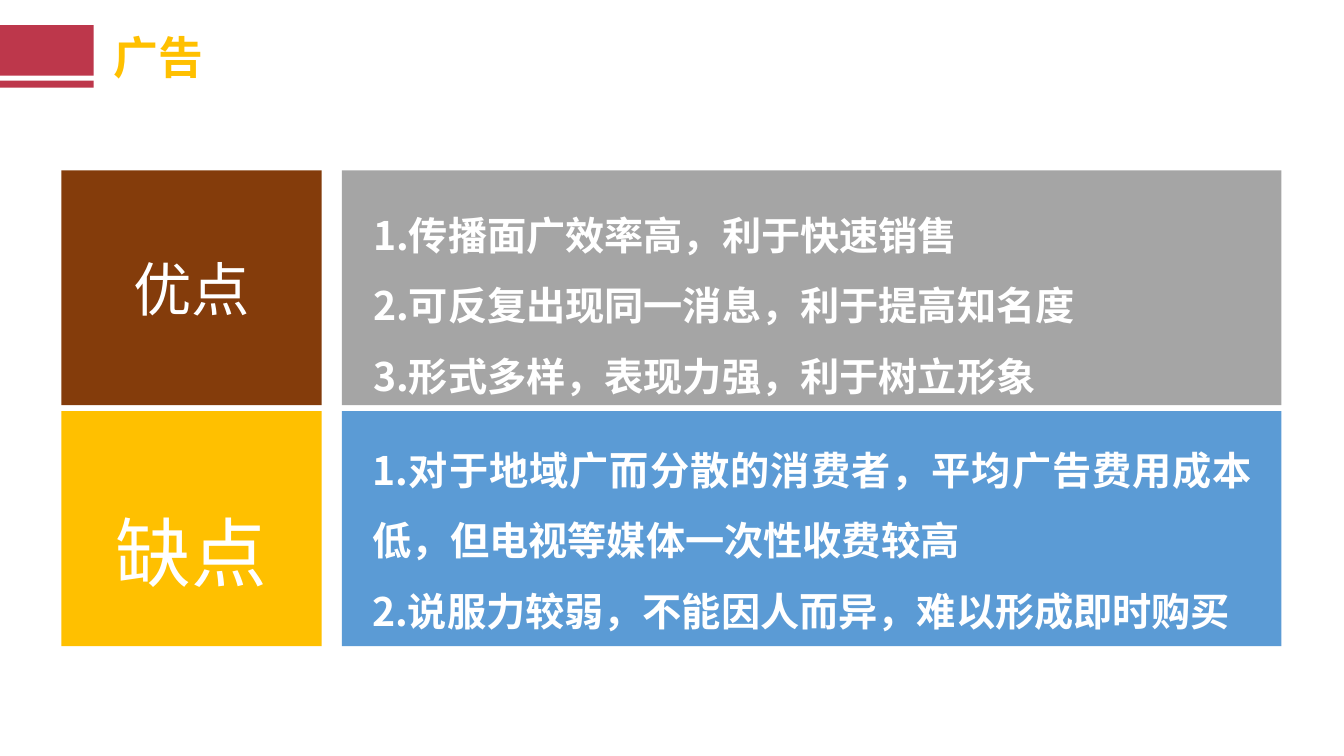
"""Build the slide on the strengths and weaknesses of advertising."""
from pptx import Presentation
from pptx import util as u
from pptx.dml.color import RGBColor
from pptx.enum import shapes, text
from pptx.oxml import ns, xmlchemy

COLOURS = {
    "brown": "843C0B", "grey": "A5A5A5", "gold": "FFC000",
    "blue": "5B9BD5", "red": "BD374B", "white": "FFFFFF",
}
BODY_FONT = "Noto Sans CJK SC"
LABEL_LEFT, LABEL_WIDTH = 0.61, 2.58
PANEL_LEFT, PANEL_WIDTH = 3.39, 9.32
TOP, ROW_HEIGHT, ROW_PITCH = 1.69, 2.33, 2.39
ROWS = [
    {
        "label": "优点", "size": 41.7, "spacing": None,
        "label_fill": "brown", "panel_fill": "grey", "text_at": (3.7, 1.86),
        "points": ["1.传播面广效率高，利于快速销售",
                   "2.可反复出现同一消息，利于提高知名度",
                   "3.形式多样，表现力强，利于树立形象"],
    },
    {
        "label": "缺点", "size": 54, "spacing": 1.5,
        "label_fill": "gold", "panel_fill": "blue", "text_at": (3.69, 4.19),
        "points": ["1.对于地域广而分散的消费者，平均广告费用成本低，但电视等媒体一次性收费较高",
                   "2.说服力较弱，不能因人而异，难以形成即时购买"],
    },
]


def add_block(slide, left, top, width, height, fill):
    """Add a plain filled rectangle without outline or shadow."""
    block = slide.shapes.add_shape(
        shapes.MSO_SHAPE.RECTANGLE, *map(u.Inches, (left, top, width, height)))
    block.shadow.inherit = False
    block.fill.solid()
    block.fill.fore_color.rgb = RGBColor.from_string(COLOURS[fill])
    block.line.fill.background()
    return block


def add_text_box(slide, left, top, width, height):
    """Add a wrapping text box that grows with its text."""
    box = slide.shapes.add_textbox(*map(u.Inches, (left, top, width, height)))
    box.text_frame.word_wrap = True
    box.text_frame.auto_size = text.MSO_AUTO_SIZE.SHAPE_TO_FIT_TEXT
    return box


def write(box, lines, size, font="Arial", colour="white", bold=False,
          align=None, spacing=None):
    """Write one formatted paragraph for each line."""
    frame = box.text_frame
    for number, line in enumerate(lines):
        para = frame.add_paragraph() if number else frame.paragraphs[0]
        para.alignment = align
        para.line_spacing = spacing
        span = para.add_run()
        span.text = line
        span.font.size = u.Pt(size)
        span.font.name = font
        span.font.bold = bold
        span.font.color.rgb = RGBColor.from_string(COLOURS[colour])
        if font == BODY_FONT:
            east_asian = xmlchemy.OxmlElement("a:ea")
            east_asian.set("typeface", font)
            span.font._element.find(ns.qn("a:latin")).addnext(east_asian)


def add_row(slide, top, row):
    """Add a label block and its panel of points."""
    label = add_block(slide, LABEL_LEFT, top, LABEL_WIDTH, ROW_HEIGHT,
                      row["label_fill"])
    label.text_frame.vertical_anchor = text.MSO_ANCHOR.MIDDLE
    write(label, [row["label"]], row["size"], align=text.PP_ALIGN.CENTER,
          spacing=row["spacing"])
    add_block(slide, PANEL_LEFT, top, PANEL_WIDTH, ROW_HEIGHT,
              row["panel_fill"])
    points = add_text_box(slide, *row["text_at"], 8.73, 2.12)
    frame = points.text_frame
    frame.margin_left = frame.margin_right = 0
    frame.margin_top = frame.margin_bottom = 0
    write(points, row["points"], 28, font=BODY_FONT, bold=True,
          align=text.PP_ALIGN.JUSTIFY, spacing=1.5)


def add_heading(slide):
    """Add the two red bars and the slide title."""
    for top, height in ((0.25, 0.5), (0.8, 0.07)):
        add_block(slide, -0.01, top, 0.94, height, "red")
    title = add_text_box(slide, 1.03, 0.25, 6.65, 0.64)
    write(title, ["广告"], 32, colour="gold", bold=True)


def main():
    """Build and save the deck."""
    deck = Presentation()
    deck.slide_width, deck.slide_height = u.Inches(13.33), u.Inches(7.5)
    slide = deck.slides.add_slide(deck.slide_layouts[6])
    add_heading(slide)
    for number, row in enumerate(ROWS):
        add_row(slide, TOP + number * ROW_PITCH, row)
    deck.save("out.pptx")


if __name__ == "__main__":
    main()
